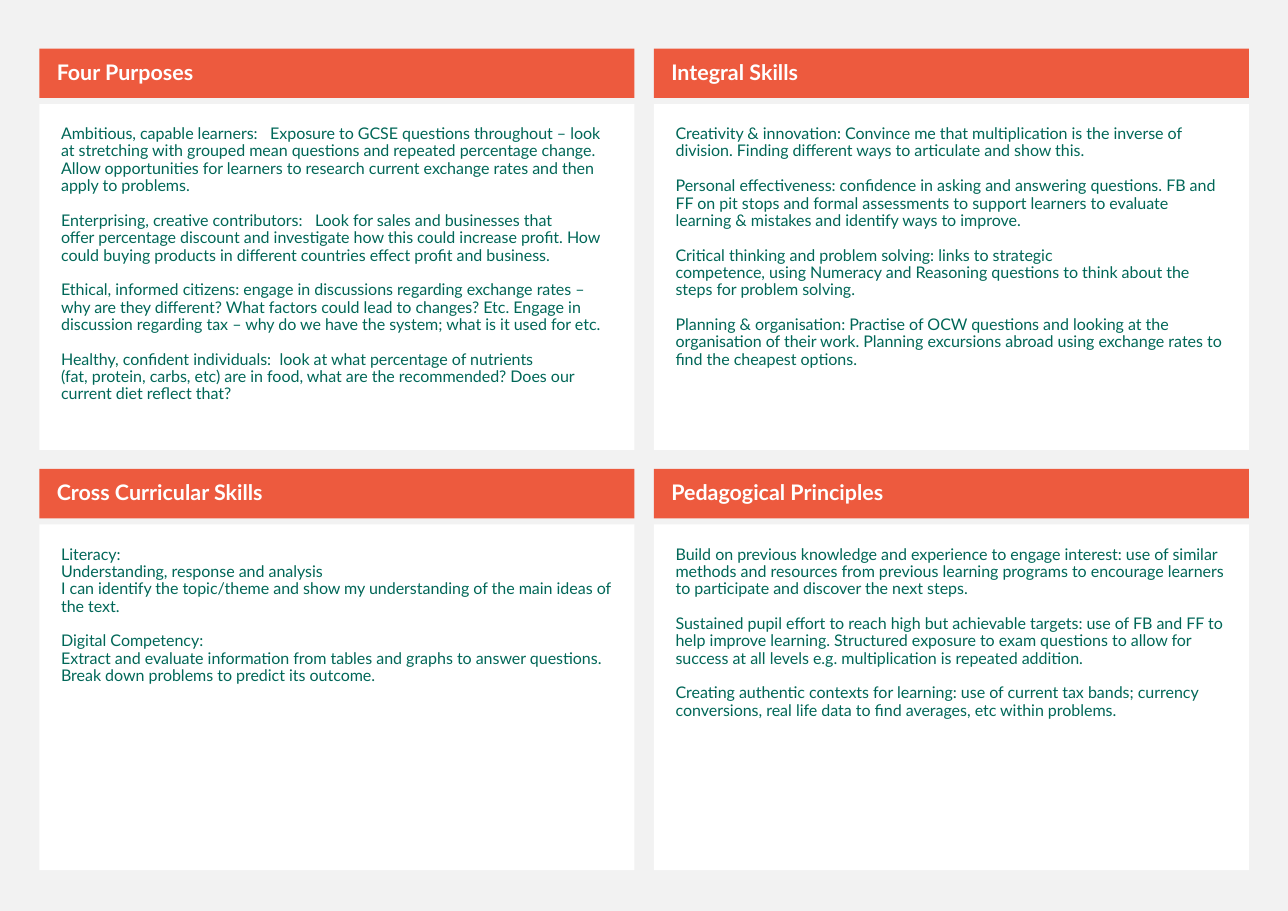
from dataclasses import dataclass

from pptx import Presentation
from pptx.dml.color import RGBColor
from pptx.enum import shapes, text
from pptx.shapes.autoshape import Shape
from pptx.slide import Slide
from pptx.util import Cm, Pt

FONT = "Lato"
BACKGROUND, ORANGE, GREEN, WHITE = "F2F2F2", "ED5A3E", "006758", "FFFFFF"
LEFT, TOP = 0.91, 1.12
COLUMN_PITCH, ROW_PITCH = 14.17, 9.69
PANEL_WIDTH, HEADER_HEIGHT = 13.72, 1.14
BODY_OFFSET, BODY_HEIGHT = 1.28, 7.97
GROUP_GAP = 11.3
TIE, NO_BREAK_SPACE = "~", chr(160)


@dataclass(frozen=True)
class Panel:
    title: str
    groups: list[list[str]]


@dataclass(frozen=True)
class TextStyle:
    size: float
    color: str
    bold: bool


HEADER_STYLE = TextStyle(14, WHITE, True)
BODY_STYLE = TextStyle(10.5, GREEN, False)

PANELS = [
    Panel("Four Purposes", [
        ["Ambitious, capable learners:~~~Exposure to GCSE questions throughout – look at "
         "stretching with grouped mean questions and repeated percentage change. Allow "
         "opportunities for learners to research current exchange rates and then apply to "
         "problems."],
        ["Enterprising, creative contributors:~~~Look for sales and businesses that "
         "offer~percentage discount and investigate how this could increase profit. How "
         "could buying products in different countries effect profit and business."],
        ["Ethical, informed citizens: engage in discussions regarding exchange rates – why "
         "are they different? What factors could lead to changes? Etc. Engage in discussion "
         "regarding tax – why do we have the system; what is it used for etc."],
        ["Healthy, confident individuals:~~look at what percentage of nutrients "
         "(fat,~protein, carbs, etc) are in food, what are the recommended? Does our "
         "current diet reflect that?"],
    ]),
    Panel("Integral Skills", [
        ["Creativity & innovation: Convince me that multiplication is the inverse of "
         "division. Finding different ways to articulate and show this."],
        ["Personal effectiveness: confidence in asking and answering questions. FB and FF "
         "on pit stops and formal assessments to support learners to evaluate learning & "
         "mistakes and identify ways to improve."],
        ["Critical thinking and problem solving: links to strategic "
         "competence,~using~Numeracy and Reasoning questions to think about the "
         "steps~for problem solving."],
        ["Planning & organisation: Practise of OCW questions and looking at the "
         "organisation of their work. Planning excursions abroad using exchange rates to "
         "find the cheapest options."],
    ]),
    Panel("Cross Curricular Skills", [
        ["Literacy:",
         "Understanding, response and analysis",
         "I can identify the topic/theme and show my understanding of the main ideas of "
         "the text."],
        ["Digital Competency:",
         "Extract and evaluate information from tables and graphs to answer questions.",
         "Break down problems to predict its outcome."],
    ]),
    Panel("Pedagogical Principles", [
        ["Build on previous knowledge and experience to engage interest: use of similar "
         "methods and resources from previous learning programs to encourage learners to "
         "participate and discover the next steps."],
        ["Sustained pupil effort to reach high but achievable targets: use of FB and FF to "
         "help improve learning. Structured exposure to exam questions to allow for success "
         "at all levels e.g. multiplication is repeated addition."],
        ["Creating authentic contexts for learning: use of current tax bands; currency "
         "conversions, real life data to find averages, etc within problems."],
    ]),
]


def rgb(color: str) -> RGBColor:
    return RGBColor.from_string(color)


def add_box(slide: Slide, left: float, top: float, height: float, fill: str) -> Shape:
    shape = slide.shapes.add_shape(
        shapes.MSO_SHAPE.RECTANGLE, Cm(left), Cm(top), Cm(PANEL_WIDTH), Cm(height))
    shape.shadow.inherit = False
    shape.fill.solid()
    shape.fill.fore_color.rgb = rgb(fill)
    shape.line.fill.background()
    return shape


def set_margins(shape: Shape, left: float, top: float, right: float, bottom: float) -> None:
    frame = shape.text_frame
    frame.margin_left, frame.margin_top = Cm(left), Cm(top)
    frame.margin_right, frame.margin_bottom = Cm(right), Cm(bottom)


def write_groups(shape: Shape, groups: list[list[str]], style: TextStyle,
                 anchor: text.MSO_ANCHOR) -> None:
    frame = shape.text_frame
    frame.word_wrap = True
    frame.vertical_anchor = anchor
    paragraph = frame.paragraphs[0]
    for group_index, group in enumerate(groups):
        for line_index, line in enumerate(group):
            if group_index or line_index:
                paragraph = frame.add_paragraph()
            starts_group = group_index > 0 and line_index == 0
            paragraph.text = line.replace(TIE, NO_BREAK_SPACE)
            paragraph.alignment = text.PP_ALIGN.LEFT
            paragraph.line_spacing = 0.9
            paragraph.space_before = Pt(GROUP_GAP if starts_group else 0)
            paragraph.font.name = FONT
            paragraph.font.size = Pt(style.size)
            paragraph.font.bold = style.bold
            paragraph.font.color.rgb = rgb(style.color)


def add_panel(slide: Slide, panel: Panel, left: float, top: float) -> None:
    body = add_box(slide, left, top + BODY_OFFSET, BODY_HEIGHT, WHITE)
    set_margins(body, 0.5, 0.5, 0.5, 0.5)
    write_groups(body, panel.groups, BODY_STYLE, text.MSO_ANCHOR.TOP)

    header = add_box(slide, left, top, HEADER_HEIGHT, ORANGE)
    set_margins(header, 0.4, 0.13, 0.25, 0.13)
    write_groups(header, [[panel.title]], HEADER_STYLE, text.MSO_ANCHOR.MIDDLE)


def main() -> None:
    presentation = Presentation()
    presentation.slide_width, presentation.slide_height = Cm(29.7), Cm(21)
    slide = presentation.slides.add_slide(presentation.slide_layouts[6])
    slide.background.fill.solid()
    slide.background.fill.fore_color.rgb = rgb(BACKGROUND)

    for index, panel in enumerate(PANELS):
        row, column = divmod(index, 2)
        add_panel(slide, panel, LEFT + column * COLUMN_PITCH, TOP + row * ROW_PITCH)

    presentation.save("out.pptx")


if __name__ == "__main__":
    main()
